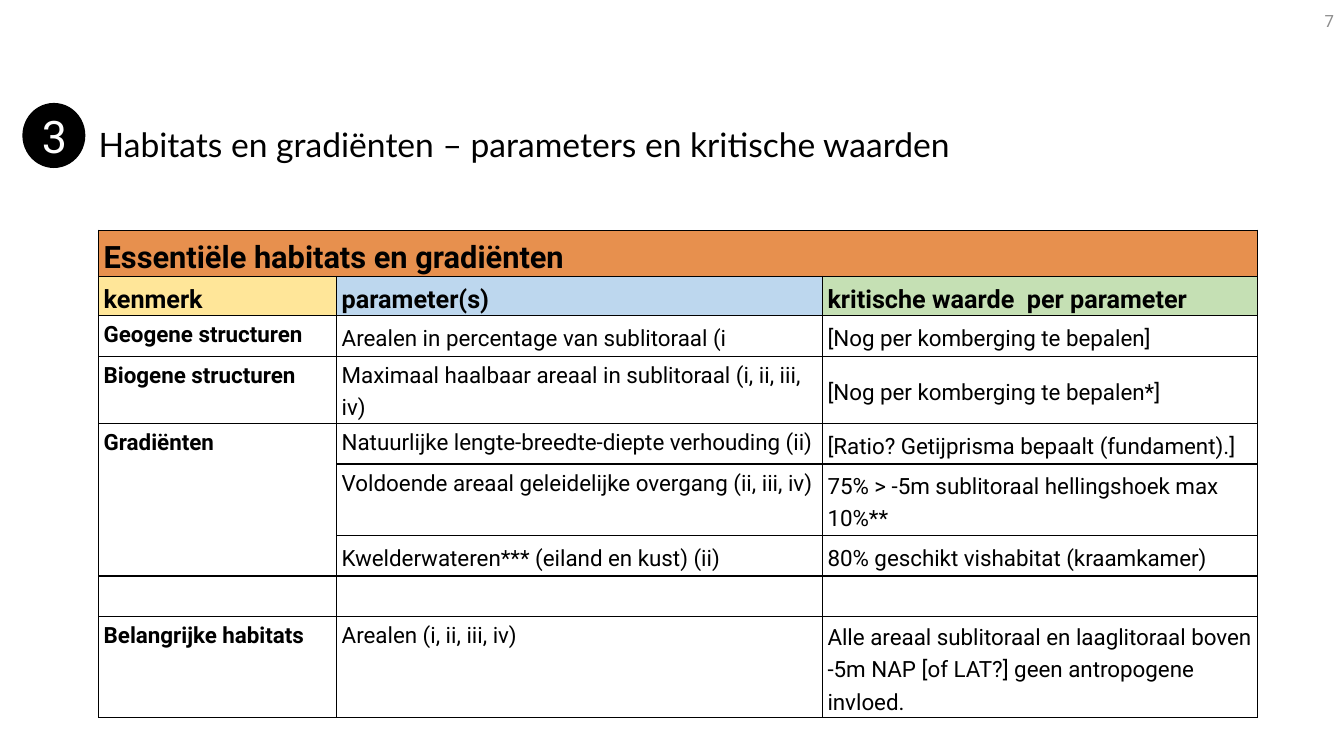
from lxml.etree import SubElement
from pptx import Presentation
from pptx.dml.color import RGBColor
from pptx.enum.shapes import MSO_SHAPE
from pptx.enum.text import MSO_ANCHOR, MSO_AUTO_SIZE, PP_ALIGN
from pptx.oxml.ns import qn
from pptx.util import Pt

HUES = {
    "black": "000000", "white": "FFFFFF", "grey": "8C8C8C",
    "orange": "E7904E", "yellow": "FFE699", "blue": "BDD7EE", "green": "C5E0B4",
}


def write(para, text, size, hue="black", font="Roboto", bold=False):
    run = para.add_run()
    run.text = text
    run.font.size = Pt(size)
    run.font.name = font
    run.font.bold = bold
    run.font.color.rgb = RGBColor.from_string(HUES[hue])


def frame(cell):
    props = cell._tc.get_or_add_tcPr()
    for index, side in enumerate(("lnL", "lnR", "lnT", "lnB")):
        line = props.makeelement(qn("a:" + side), {"w": str(Pt(1))})
        fill = SubElement(line, qn("a:solidFill"))
        SubElement(fill, qn("a:srgbClr"), val=HUES["black"])
        props.insert(index, line)


deck = Presentation()
deck.slide_width, deck.slide_height = Pt(960), Pt(540)
slide = deck.slides.add_slide(deck.slide_layouts[5])

title = slide.shapes.title
title.left, title.top, title.width, title.height = Pt(70.5), Pt(92), Pt(828), Pt(45)
body = title.text_frame
body.margin_left = body.margin_right = body.margin_top = body.margin_bottom = 0
body.vertical_anchor = MSO_ANCHOR.TOP
body.auto_size = MSO_AUTO_SIZE.NONE
body.word_wrap = True
para = body.paragraphs[0]
para.alignment = PP_ALIGN.LEFT
para.line_spacing = 0.9
write(para, "Habitats en gradiënten – parameters en kritische waarden", 24, font="Lato")

number = slide.shapes.add_textbox(Pt(744), 0, Pt(216), Pt(29)).text_frame
number.word_wrap = True
number.vertical_anchor = MSO_ANCHOR.MIDDLE
number.paragraphs[0].alignment = PP_ALIGN.RIGHT
write(number.paragraphs[0], "7", 12, "grey")

badge = slide.shapes.add_shape(MSO_SHAPE.OVAL, Pt(16.5), Pt(74), Pt(44), Pt(45.5))
badge.shadow.inherit = False
badge.fill.solid()
badge.fill.fore_color.rgb = RGBColor.from_string(HUES["black"])
badge.line.color.rgb = RGBColor.from_string(HUES["black"])
badge.line.width = Pt(1)
badge.text_frame.vertical_anchor = MSO_ANCHOR.MIDDLE
badge.text_frame.paragraphs[0].alignment = PP_ALIGN.CENTER
write(badge.text_frame.paragraphs[0], "3", 32, "white")

ROWS = [
    ("Essentiële habitats en gradiënten", "", ""),
    ("kenmerk", "parameter(s)", "kritische waarde  per parameter"),
    ("Geogene structuren", "Arealen in percentage van sublitoraal (i",
     "[Nog per komberging te bepalen]"),
    ("Biogene structuren", "Maximaal haalbaar areaal in sublitoraal (i, ii, iii, iv)",
     "[Nog per komberging te bepalen*]"),
    ("Gradiënten", "Natuurlijke lengte-breedte-diepte verhouding (ii)",
     "[Ratio? Getijprisma bepaalt (fundament).]"),
    ("", "Voldoende areaal geleidelijke overgang (ii, iii, iv)",
     "75% > -5m sublitoraal hellingshoek max 10%**"),
    ("", "Kwelderwateren*** (eiland en kust) (ii)", "80% geschikt vishabitat (kraamkamer)"),
    ("", "", ""),
    ("Belangrijke habitats", "Arealen (i, ii, iii, iv)",
     "Alle areaal sublitoraal en laaglitoraal boven -5m NAP [of LAT?] geen antropogene invloed."),
]
HEADS = {0: ["orange"] * 3, 1: ["yellow", "blue", "green"]}
SIZES = {0: 22, 1: 18}
HIGH = {0: 30.5, 1: 28, 5: 51}
TOPS = {(row, 1) for row in (3, 4, 5, 8)} | {(row, 0) for row in range(2, 9)}

table = slide.shapes.add_table(9, 3, Pt(70.5), Pt(164.5), Pt(828), Pt(299)).table
table.first_row = table.horz_banding = False
for col, width in zip(table.columns, (170, 347, 311)):
    col.width = Pt(width)

for row, texts in enumerate(ROWS):
    table.rows[row].height = Pt(HIGH.get(row, 29))
    for col, text in enumerate(texts):
        cell = table.cell(row, col)
        cell.margin_left = cell.margin_right = Pt(3.6)
        cell.margin_top = cell.margin_bottom = 0
        cell.vertical_anchor = MSO_ANCHOR.TOP if (row, col) in TOPS else MSO_ANCHOR.MIDDLE
        cell.fill.solid()
        hue = HEADS.get(row, ["white"] * 3)[col]
        cell.fill.fore_color.rgb = RGBColor.from_string(HUES[hue])
        frame(cell)
        if text:
            para = cell.text_frame.paragraphs[0]
            para.line_spacing = 1.25
            para.space_after = Pt(0 if col == 0 and row > 2 else 8)
            write(para, text, SIZES.get(row, 16), bold=row < 2 or col == 0)

table.cell(0, 0).merge(table.cell(0, 2))
table.cell(4, 0).merge(table.cell(6, 0))

deck.save("out.pptx")
